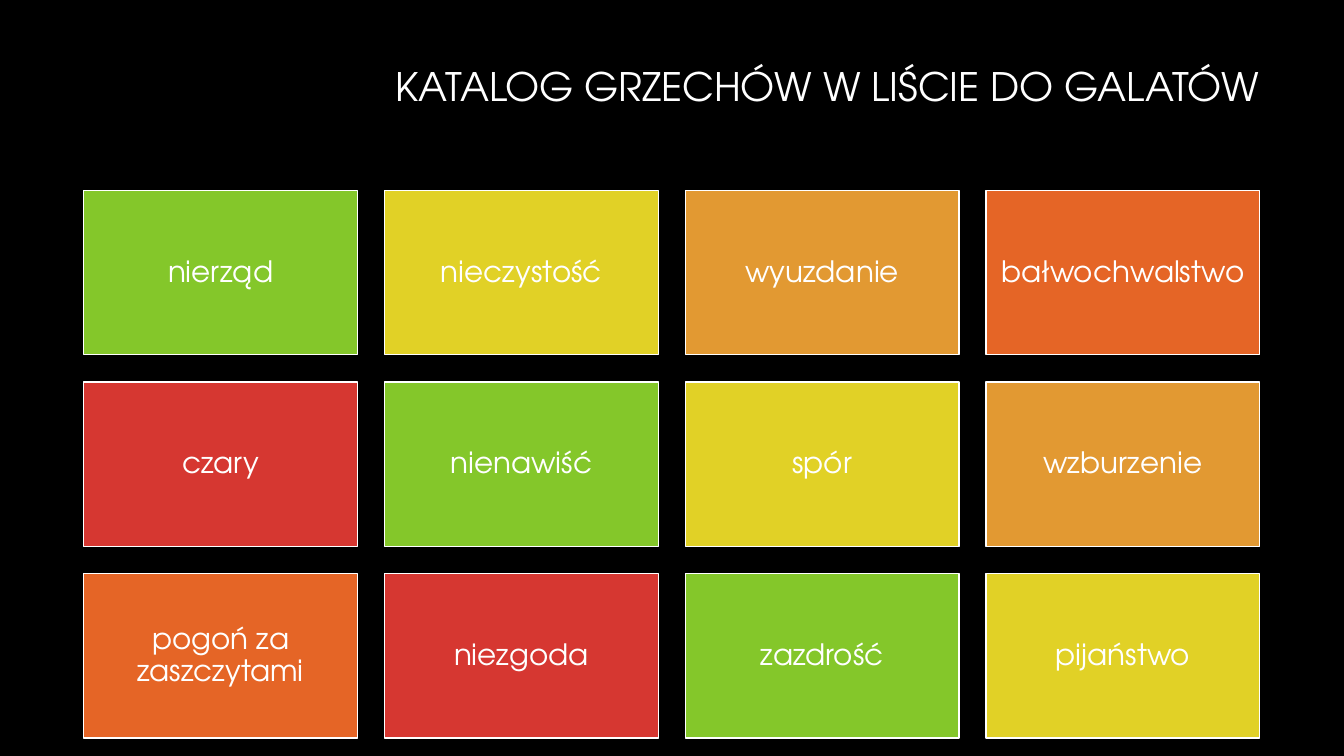
from pptx import Presentation
from pptx import util as u
from pptx.dml.color import RGBColor
from pptx.enum import shapes, text

TITLE = "KATALOG GRZECHÓW W LIŚCIE DO GALATÓW"
SINS = [
    "nierząd", "nieczystość", "wyuzdanie", "bałwochwalstwo",
    "czary", "nienawiść", "spór", "wzburzenie",
    "pogoń za zaszczytami", "niezgoda", "zazdrość", "pijaństwo",
]
COLORS = {
    "background": "000000",
    "white": "FFFFFF",
    "green": "84C72A",
    "yellow": "E1D126",
    "amber": "E29932",
    "orange": "E56526",
    "red": "D63731",
}
TILE_CYCLE = ["green", "yellow", "amber", "orange", "red"]
FONT = "TeX Gyre Adventor"
COLUMNS = 4
LEFT, TOP = 2.11, 4.8
TILE_WIDTH, TILE_HEIGHT = 6.9, 4.14
STEP_X, STEP_Y = 7.58, 4.83
TILE_INSET = 0.23


def color(name):
    return RGBColor.from_string(COLORS[name])


def write(box, words, size, alignment):
    frame = box.text_frame
    frame.text = words
    frame.word_wrap = True
    frame.vertical_anchor = text.MSO_ANCHOR.MIDDLE
    paragraph = frame.paragraphs[0]
    paragraph.alignment = alignment
    paragraph.line_spacing = 0.9
    font = paragraph.runs[0].font
    font.name = FONT
    font.size = u.Pt(size)
    font.color.rgb = color("white")


def add_tile(slide, index, sin):
    row, column = divmod(index, COLUMNS)
    tile = slide.shapes.add_shape(
        shapes.MSO_SHAPE.RECTANGLE,
        u.Cm(LEFT + column * STEP_X), u.Cm(TOP + row * STEP_Y),
        u.Cm(TILE_WIDTH), u.Cm(TILE_HEIGHT))
    tile.shadow.inherit = False
    tile.fill.solid()
    tile.fill.fore_color.rgb = color(TILE_CYCLE[index % len(TILE_CYCLE)])
    tile.line.color.rgb = color("white")
    tile.line.width = u.Pt(1)
    frame = tile.text_frame
    frame.margin_left = frame.margin_right = u.Cm(TILE_INSET)
    frame.margin_top = frame.margin_bottom = u.Cm(TILE_INSET)
    write(tile, sin, 21, text.PP_ALIGN.CENTER)


def main():
    deck = Presentation()
    deck.slide_width, deck.slide_height = u.Cm(33.87), u.Cm(19.05)
    slide = deck.slides.add_slide(deck.slide_layouts[6])
    slide.background.fill.solid()
    slide.background.fill.fore_color.rgb = color("background")

    title = slide.shapes.add_textbox(u.Cm(8.05), u.Cm(1.14), u.Cm(23.93), u.Cm(2.21))
    write(title, TITLE, 28, text.PP_ALIGN.RIGHT)

    for index, sin in enumerate(SINS):
        add_tile(slide, index, sin)

    deck.save("out.pptx")


if __name__ == "__main__":
    main()
